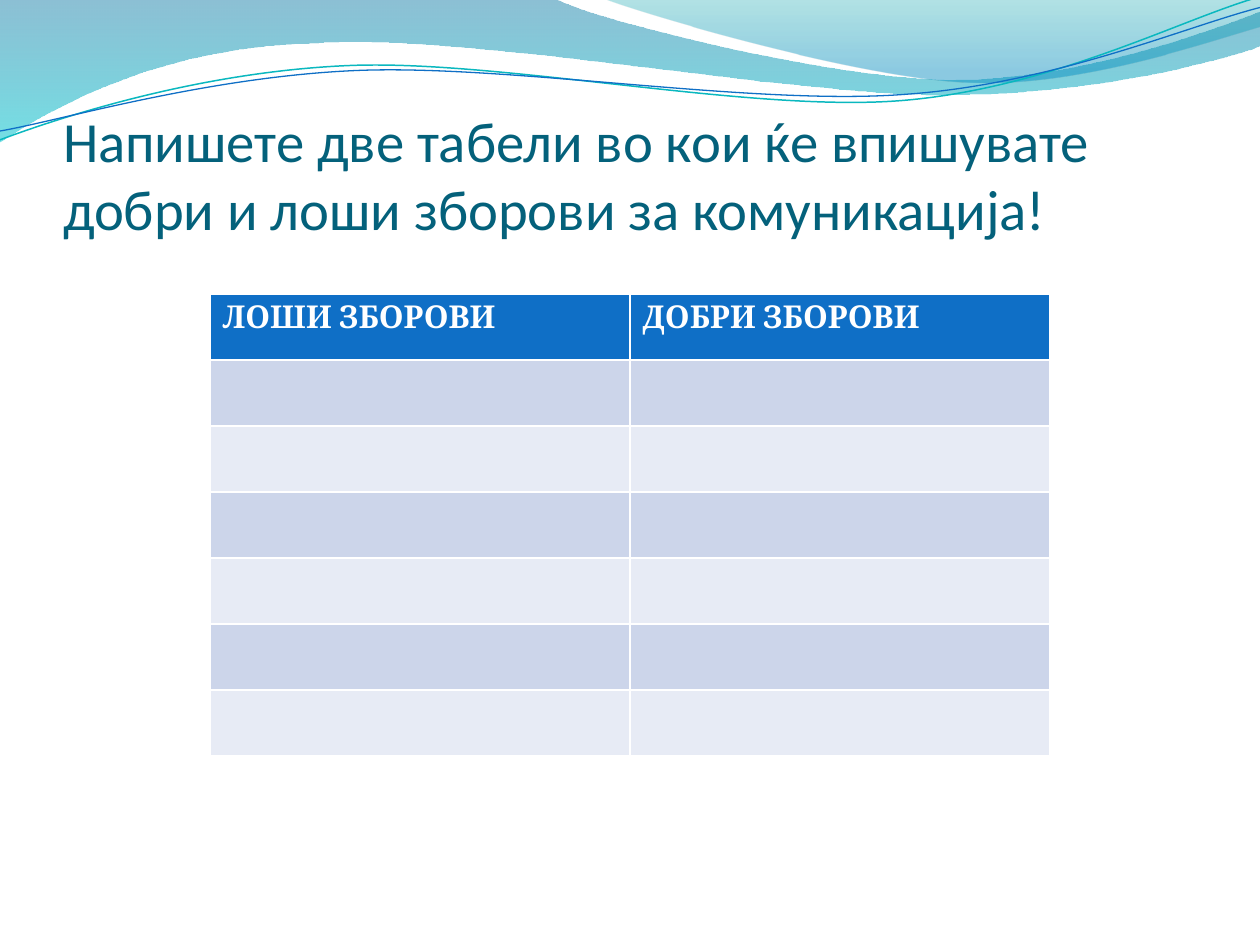
import math

import pptx
import pptx.dml.color
import pptx.enum.text
import pptx.oxml
import pptx.oxml.ns
import pptx.util
from pptx.util import Inches

RGBColor = pptx.dml.color.RGBColor
WHITE = RGBColor(0xFF, 0xFF, 0xFF)
TITLE_TEAL = RGBColor(0x04, 0x61, 0x7B)
HEADER_BLUE = RGBColor(0x0F, 0x6F, 0xC6)
LINE_TEAL = RGBColor(0x0A, 0xB8, 0xBF)
BAND_DARK = RGBColor(0xCC, 0xD5, 0xEA)
BAND_LIGHT = RGBColor(0xE7, 0xEB, 0xF5)
WAVE_BLUE = RGBColor(0x00, 0x74, 0xA1)
WAVE_CYAN = RGBColor(0x00, 0xC6, 0xCF)
CREST_TEAL = RGBColor(0x00, 0xA1, 0xA9)
CREST_BLUE = RGBColor(0x00, 0x8B, 0xBF)
LINE_ROTATION = 357.3


def add_curve(shapes, start, segments, close):
    points = [start]
    for segment in segments:
        points.extend(zip(segment[::2], segment[1::2]))
    points = [(Inches(x), Inches(y)) for x, y in points]
    builder = shapes.build_freeform(*points[0], scale=1.0)
    builder.add_line_segments(points[1:], close=close)
    shape = builder.convert_to_shape()
    shape.shadow.inherit = False
    straight_parts = iter(list(shape._element.iter(pptx.oxml.ns.qn("a:lnTo"))))
    for segment in segments:
        part = next(straight_parts)
        if len(segment) == 6:
            part.tag = pptx.oxml.ns.qn("a:cubicBezTo")
            for _ in range(2):
                following = next(straight_parts)
                part.append(following[0])
                following.getparent().remove(following)
    return shape


def unrotate(segment, center_x, center_y):
    angle = math.radians(360 - LINE_ROTATION)
    turned = []
    for x, y in zip(segment[::2], segment[1::2]):
        x, y = x - center_x, y - center_y
        turned.append(center_x + x * math.cos(angle) - y * math.sin(angle))
        turned.append(center_y + x * math.sin(angle) + y * math.cos(angle))
    return tuple(turned)


presentation = pptx.Presentation()
presentation.slide_width = Inches(10)
presentation.slide_height = Inches(7.5)
slide = presentation.slides.add_slide(presentation.slide_layouts[6])

waves = [
    ((0, 0),
     [(4.4, -0.01), (4.76, 0.17, 6.64, 0.63, 7.58, 0.63),
      (8.53, 0.63, 9.58, 0.26, 10, 0.09), (10.01, 0.36),
      (9.83, 0.44, 8.7, 0.76, 7.46, 0.75),
      (6.22, 0.75, 3.82, 0.28, 2.57, 0.34),
      (1.29, 0.36, 0.46, 0.83, -0.01, 1.13), (0, 0)],
     [(0, WAVE_BLUE, 45), (1, WAVE_CYAN, 55)]),
    ((4.79, -0.01),
     [(5.09, 0.11, 6.82, 0.62, 7.69, 0.65),
      (8.56, 0.69, 9.61, 0.32, 10, 0.21), (10, 0), (4.79, -0.01)],
     [(0, CREST_TEAL, 30), (0.8, CREST_BLUE, 45)]),
]
for start, segments, stops in waves:
    wave = add_curve(slide.shapes, start, segments, True)
    wave.line.fill.background()
    wave.fill.gradient()
    wave.fill.gradient_angle = 270
    for gradient_stop, (position, color, _) in zip(wave.fill.gradient_stops, stops):
        gradient_stop.position = position
        gradient_stop.color.rgb = color
    gradient = wave._element.spPr.find(pptx.oxml.ns.qn("a:gradFill"))
    for color_element, (_, _, opacity) in zip(
            gradient.iter(pptx.oxml.ns.qn("a:srgbClr")), stops):
        color_element.append(pptx.oxml.parse_xml(
            f'<a:alpha {pptx.oxml.ns.nsdecls("a")} val="{opacity * 1000}"/>'))

wave_lines = [
    ((0, 1.11),
     [(0.48, 0.93, 1.58, 0.57, 2.77, 0.52),
      (3.95, 0.47, 5.93, 0.89, 7.13, 0.8),
      (8.33, 0.71, 9.38, 0.15, 9.98, -0.02)], (4.99, 0.57), LINE_TEAL, 0.85),
    ((0, 1.04),
     [(0.47, 0.96, 1.64, 0.61, 2.83, 0.56),
      (4.03, 0.51, 5.97, 0.84, 7.17, 0.75),
      (8.36, 0.67, 9.41, 0.21, 10, 0.06)], (5, 0.59), HEADER_BLUE, 0.75),
]
for start, segments, center, color, width in wave_lines:
    level_segments = [unrotate(segment, *center) for segment in segments]
    wave_line = add_curve(slide.shapes, unrotate(start, *center), level_segments, False)
    wave_line.rotation = LINE_ROTATION
    wave_line.fill.background()
    wave_line.line.color.rgb = color
    wave_line.line.width = pptx.util.Pt(width)

title = slide.shapes.add_textbox(Inches(0.5), Inches(0.77), Inches(9.08), Inches(1.15))
title_frame = title.text_frame
title_frame.word_wrap = True
title_frame.vertical_anchor = pptx.enum.text.MSO_ANCHOR.BOTTOM
title_frame.margin_left = title_frame.margin_right = title_frame.margin_bottom = 0
title_frame.margin_top = Inches(0.05)
paragraph = title_frame.paragraphs[0]
paragraph.text = "Напишете две табели во кои ќе впишувате добри и лоши зборови за комуникација!"
paragraph.font.name = "Calibri"
paragraph.font.size = pptx.util.Pt(32.4)
paragraph.font.color.rgb = TITLE_TEAL

headings = ["ЛОШИ ЗБОРОВИ", "ДОБРИ ЗБОРОВИ"]
row_count = 7
table = slide.shapes.add_table(row_count, len(headings), Inches(5 / 3), Inches(7 / 3),
                               Inches(20 / 3), Inches(3.67)).table
for row_index in range(row_count):
    for column_index, heading in enumerate(headings):
        cell = table.cell(row_index, column_index)
        cell.fill.solid()
        if row_index == 0:
            cell.fill.fore_color.rgb = HEADER_BLUE
            paragraph = cell.text_frame.paragraphs[0]
            paragraph.text = heading
            paragraph.font.name = "Cambria"
            paragraph.font.size = pptx.util.Pt(18)
            paragraph.font.bold = True
            paragraph.font.color.rgb = WHITE
        else:
            cell.fill.fore_color.rgb = BAND_DARK if row_index % 2 else BAND_LIGHT

presentation.save("out.pptx")
